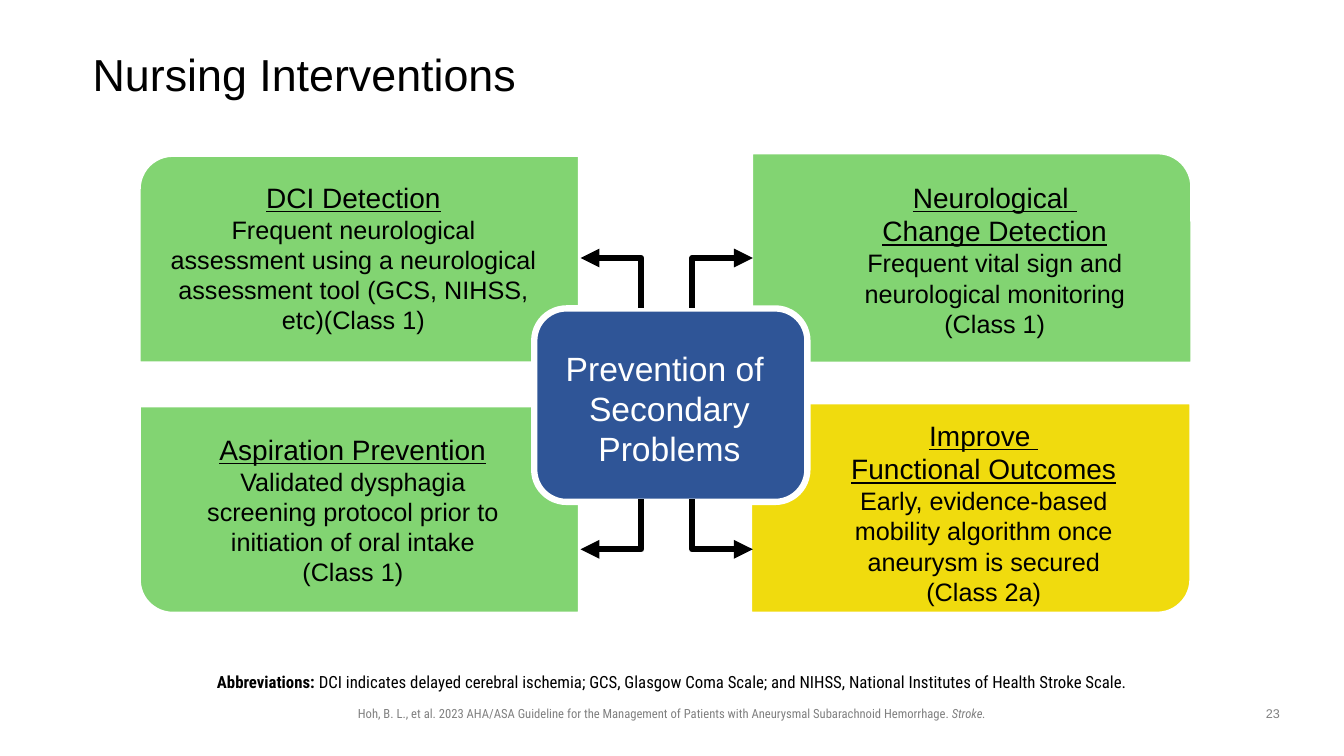
from pptx import Presentation
from pptx.dml.color import RGBColor
from pptx.enum import shapes, text
from pptx.oxml import ns
from pptx.util import Pt
from lxml import etree

GREEN = RGBColor(0x82, 0xD4, 0x72)
YELLOW = RGBColor(0xF0, 0xDB, 0x0E)
BLUE = RGBColor(0x2F, 0x55, 0x97)
GRAY = RGBColor(0x80, 0x80, 0x80)
BLACK = RGBColor(0, 0, 0)
WHITE = RGBColor(255, 255, 255)
SANS = "Arial"
CONDENSED = "Roboto Condensed"
CENTER = text.PP_ALIGN.CENTER

CARDS = [
    ((98.3, 109.8, 316.8, 150.5), 270, GREEN, (110.2, 125.3, 284.4, 118.8),
     "DCI Detection",
     ["Frequent neurological assessment using a neurological "
      "assessment tool (GCS, NIHSS, etc)(Class 1)"]),
    ((535.7, 108, 316.8, 152.6), 0, GREEN, (595.4, 125.3, 230.4, 143.3),
     "Neurological \nChange Detection",
     ["Frequent vital sign and neurological monitoring", "(Class 1)"]),
    ((98.3, 288.7, 316.8, 150.5), 180, GREEN, (131.8, 305.3, 240.5, 140.4),
     "Aspiration Prevention",
     ["Validated dysphagia screening protocol prior to initiation of oral intake",
      "(Class 1)"]),
    ((535, 286.6, 316.8, 152.6), 90, YELLOW, (579.6, 295.2, 246.2, 143.3),
     "Improve \nFunctional Outcomes",
     ["Early, evidence-based mobility algorithm once aneurysm is secured",
      "(Class 2a)"]),
]
ARROWS = [
    ((414.7, 184.3), (457.9, 220.3)),
    ((537.8, 184.3), (494.6, 220.3)),
    ((414.7, 392.4), (457.9, 356.4)),
    ((537.8, 392.4), (494.6, 356.4)),
]


def add_block(slide, kind, box, fill, rotation=0):
    """Add a white-edged block whose box is given as seen after rotation."""
    x, y, w, h = box
    if rotation % 180:
        x, y, w, h = x + (w - h) / 2, y + (h - w) / 2, h, w
    sp = slide.shapes.add_shape(kind, Pt(x), Pt(y), Pt(w), Pt(h))
    sp.rotation = rotation
    sp.shadow.inherit = False
    sp.fill.solid()
    sp.fill.fore_color.rgb = fill
    sp.line.color.rgb = WHITE
    sp.line.width = Pt(4.5)


def add_text_frame(slide, box):
    """Add a wrapping text box and return its text frame."""
    tf = slide.shapes.add_textbox(*map(Pt, box)).text_frame
    tf.word_wrap = True
    return tf


def style(p, size, color, name=SANS, align=CENTER, underline=None):
    """Set the alignment and font of a paragraph."""
    p.alignment = align
    p.font.size = Pt(size)
    p.font.name = name
    p.font.color.rgb = color
    p.font.underline = underline


def add_line(slide, box, content, size, color):
    """Add a text box with one centred paragraph."""
    p = add_text_frame(slide, box).paragraphs[0]
    p.text = content
    style(p, size, color)


def add_card_text(slide, box, heading, body):
    """Add an underlined heading with body paragraphs below it."""
    tf = add_text_frame(slide, box)
    p = tf.paragraphs[0]
    p.text = heading
    style(p, 20, BLACK, underline=True)
    for line in body:
        p = tf.add_paragraph()
        p.text = line
        style(p, 18, BLACK)


def add_bent_arrow(slide, tip, start):
    """Add a right-angled connector with its arrowhead at the tip."""
    c = slide.shapes.add_connector(shapes.MSO_CONNECTOR.ELBOW, *map(Pt, tip + start))
    c.line.color.rgb = BLACK
    c.line.width = Pt(4.5)
    props = c._element.spPr
    props.find(ns.qn("a:prstGeom")).set("prst", "bentConnector2")
    etree.SubElement(c.line._get_or_add_ln(), ns.qn("a:headEnd"), type="triangle")
    etree.SubElement(props, ns.qn("a:effectLst"))


def add_title(slide, box, content):
    """Add the slide title."""
    tf = add_text_frame(slide, box)
    tf.margin_left = tf.margin_right = tf.margin_top = tf.margin_bottom = 0
    tf.vertical_anchor = text.MSO_ANCHOR.MIDDLE
    p = tf.paragraphs[0]
    p.text = content
    p.line_spacing = 0.9
    style(p, 32, BLACK, align=text.PP_ALIGN.LEFT)


def add_note(slide, box, parts, size, color):
    """Add a condensed line and return its runs."""
    tf = add_text_frame(slide, box)
    p = tf.paragraphs[0]
    runs = []
    for part in parts:
        r = p.add_run()
        r.text = part
        runs.append(r)
    style(p, size, color, CONDENSED)
    return runs


def main():
    """Build the slide and save it."""
    prs = Presentation()
    prs.slide_width, prs.slide_height = Pt(960), Pt(540)
    slide = prs.slides.add_slide(prs.slide_layouts[6])

    citation = add_note(slide, (211.7, 500.4, 536.4, 18), [
        "Hoh, B. L., et al. 2023 AHA/ASA Guideline for the Management of "
        "Patients with Aneurysmal Subarachnoid Hemorrhage. ", "Stroke."], 9, GRAY)
    citation[1].font.italic = True
    add_title(slide, (66.2, 28.8, 828, 51.8), "Nursing Interventions")

    for box, rotation, fill, *_ in CARDS:
        add_block(slide, shapes.MSO_SHAPE.ROUND_1_RECTANGLE, box, fill, rotation)
    add_block(slide, shapes.MSO_SHAPE.ROUNDED_RECTANGLE,
              (381.6, 220.3, 195.1, 138.2), BLUE)
    add_line(slide, (376.6, 244.8, 203, 94.3),
             "Prevention of \nSecondary Problems", 24, WHITE)
    for *_, box, heading, body in CARDS:
        add_card_text(slide, box, heading, body)
    for tip, start in ARROWS:
        add_bent_arrow(slide, tip, start)

    abbreviations = add_note(slide, (66.2, 476.6, 828, 21.6), [
        "Abbreviations: ",
        "DCI indicates delayed cerebral ischemia; GCS, Glasgow Coma Scale; and "
        "NIHSS, National Institutes of Health Stroke Scale."], 12, BLACK)
    abbreviations[0].font.bold = True
    add_line(slide, (894.2, 500.4, 30.2, 18.7), "23", 9, GRAY)
    prs.save("out.pptx")


if __name__ == "__main__":
    main()
